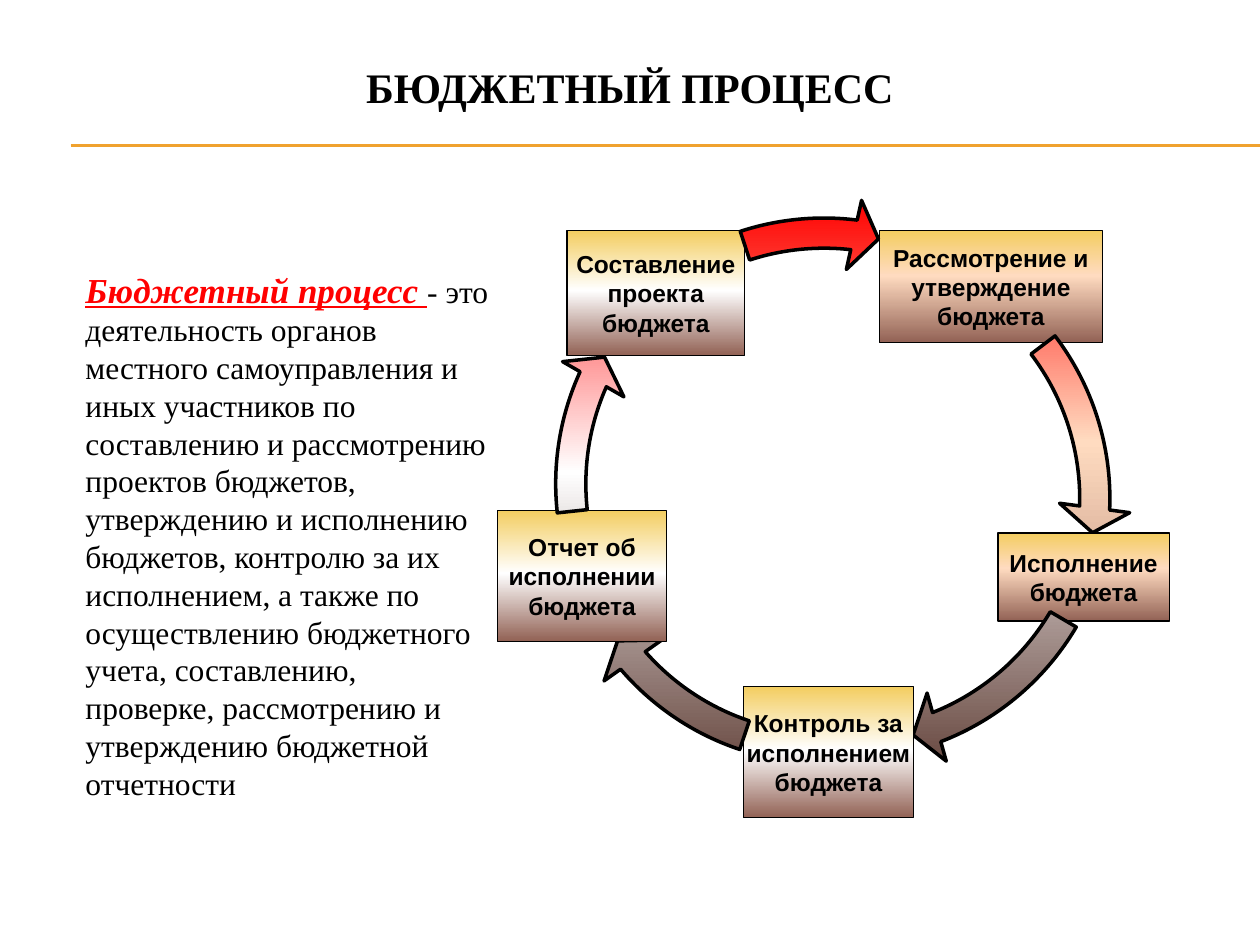
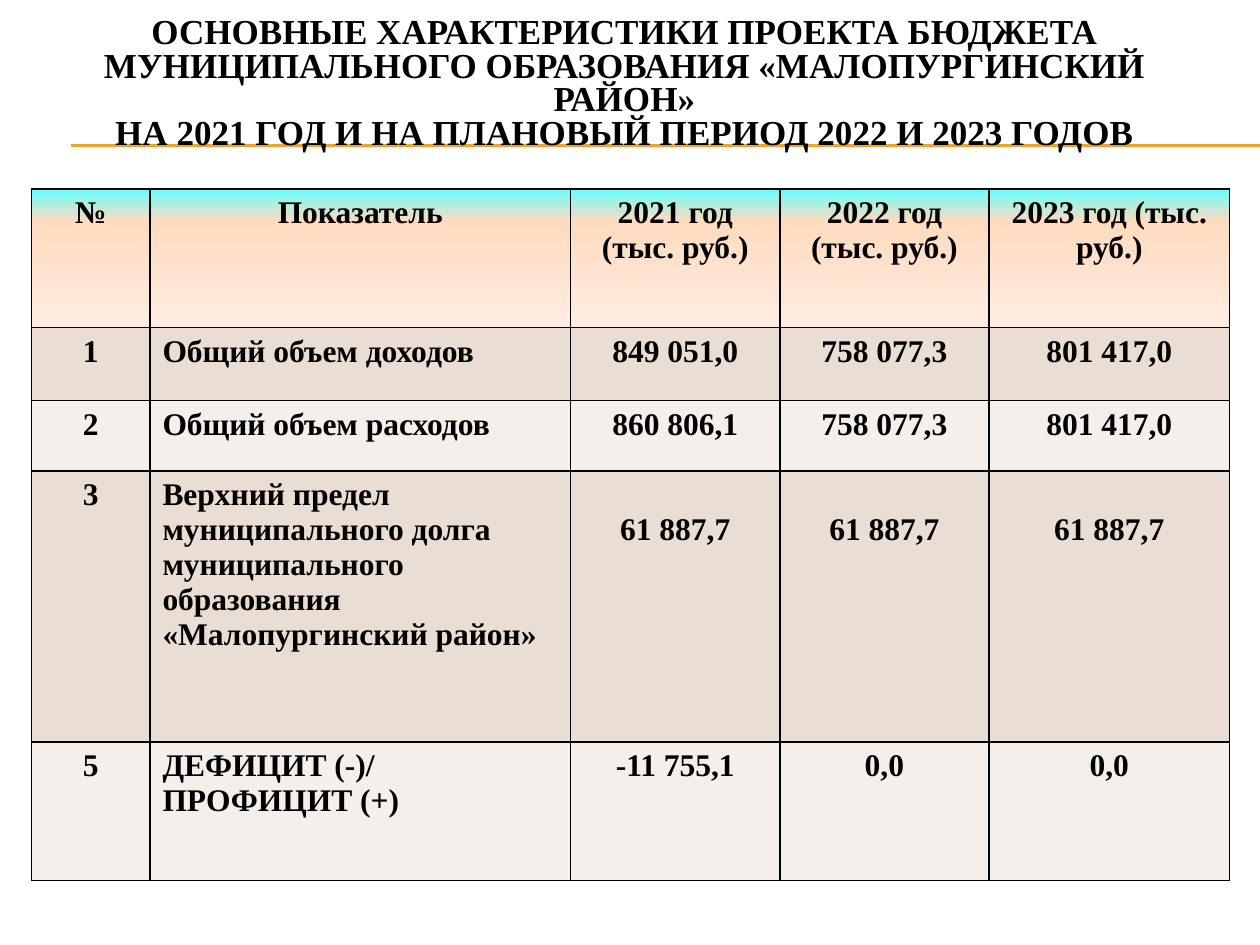
"""Build two slides on the municipal budget: the process cycle and the key figures."""
from lxml import etree
from pptx import Presentation
from pptx.dml.color import RGBColor
from pptx.enum.shapes import MSO_CONNECTOR, MSO_SHAPE
from pptx.enum.text import MSO_ANCHOR, MSO_AUTO_SIZE, PP_ALIGN
from pptx.oxml.ns import qn
from pptx.util import Inches, Pt

STRAIGHT = MSO_CONNECTOR.STRAIGHT
RECTANGLE = MSO_SHAPE.RECTANGLE
CIRCULAR_ARROW = MSO_SHAPE.CIRCULAR_ARROW
MIDDLE = MSO_ANCHOR.MIDDLE
NO_AUTOFIT = MSO_AUTO_SIZE.NONE
LEFT, CENTER = PP_ALIGN.LEFT, PP_ALIGN.CENTER
TITLE_ONLY = 5

SERIF, SANS = "Times New Roman", "Arial"
BLACK, RED, GOLD = "000000", "FF0000", "F0A22E"
PEACH_BOX = [(0, "F3CD60"), (40, "FFDBC0"), (100, "926255")]
WHITE_BOX = [(0, "F3CD60"), (48, "FFFFFF"), (100, "926255")]
PEACH_ARROW = [(0, RED), (40, "FFDBC0"), (100, "926255")]
WHITE_ARROW = [(0, RED), (40, "FFFFFF"), (100, "624139")]
LATE_WHITE_ARROW = [(0, RED), (48, "FFFFFF"), (100, "624139")]
CREAM_ARROW = [(0, RED), (49, "FBEEC9"), (100, "624139")]
HEADER_FILL = [(0, "66FFFF"), (23, "FFDBC0"), (100, "FFEDE0")]
ROW_FILLS = ["E9DDD4", "F5EFEB"]

RING_SIZE = 4.6
STAGES = [
    ("Рассмотрение и утверждение бюджета", (6.98, 1.83, 1.77, 0.89), PEACH_BOX,
     (4.37, 1.66), (322.79, 2.05), PEACH_ARROW),
    ("Исполнение бюджета", (7.92, 4.23, 1.36, 0.7), PEACH_BOX,
     (4.4, 1.59), (30.54, 68.67), WHITE_ARROW),
    ("Контроль за исполнением бюджета", (5.9, 5.45, 1.35, 1.04), WHITE_BOX,
     (4.25, 1.62), (108.5, 139.1), WHITE_ARROW),
    ("Отчет об исполнении бюджета", (3.95, 4.05, 1.34, 1.04), WHITE_BOX,
     (4.25, 1.54), (173.8, 204.26), LATE_WHITE_ARROW),
    ("Составление проекта бюджета", (4.5, 1.83, 1.41, 0.99), WHITE_BOX,
     (4.24, 1.57), (251.91, 276.77), CREAM_ARROW),
]
TERM = "Бюджетный процесс "
DEFINITION = (
    "- это деятельность органов местного самоуправления и иных участников "
    "по составлению и рассмотрению проектов бюджетов, утверждению и исполнению "
    "бюджетов, контролю за их исполнением, а также по осуществлению бюджетного "
    "учета, составлению, проверке, рассмотрению и утверждению бюджетной отчетности"
)
FIGURES_TITLE = (
    "ОСНОВНЫЕ ХАРАКТЕРИСТИКИ ПРОЕКТА БЮДЖЕТА МУНИЦИПАЛЬНОГО ОБРАЗОВАНИЯ "
    "«МАЛОПУРГИНСКИЙ РАЙОН»\n"
    "НА 2021 ГОД И НА ПЛАНОВЫЙ ПЕРИОД 2022 И 2023 ГОДОВ"
)
FIGURES = [
    ["№", "Показатель", "2021 год (тыс. руб.)", "2022 год (тыс. руб.)",
     "2023 год (тыс. руб.)"],
    ["1", "Общий объем доходов", "849 051,0", "758 077,3", "801 417,0"],
    ["2", "Общий объем расходов", "860 806,1", "758 077,3", "801 417,0"],
    ["3", "Верхний предел муниципального долга муниципального образования "
     "«Малопургинский район»", "61 887,7", "61 887,7", "61 887,7"],
    ["5", "ДЕФИЦИТ (-)/\nПРОФИЦИТ (+)", "-11 755,1", "0,0", "0,0"],
]
COLUMN_WIDTHS = [0.94, 3.34, 1.66, 1.66, 1.91]
ROW_HEIGHTS = [1.1, 0.58, 0.56, 2.15, 1.1]
INDICATOR_COLUMN, DEBT_ROW = 1, 3


def color(hex_string):
    """Turn a hex string into a colour."""
    return RGBColor.from_string(hex_string)


def add_text(paragraph, text, size=18, font=SERIF, ink=BLACK, bold=True,
             italic=False, underline=False):
    """Add text to a paragraph, with a line break at each newline."""
    for number, line in enumerate(text.split("\n")):
        if number:
            paragraph.add_line_break()
        run = paragraph.add_run()
        run.text = line
        run.font.size = Pt(size)
        run.font.name = font
        run.font.color.rgb = color(ink)
        run.font.bold = bold
        run.font.italic = italic
        run.font.underline = underline


def fill_gradient(fill, holder, stops):
    """Give a shape or cell a top-to-bottom gradient of any number of stops."""
    fill.background()
    gradient = etree.Element(qn("a:gradFill"), rotWithShape="1")
    stop_list = etree.SubElement(gradient, qn("a:gsLst"))
    for percent, shade in stops:
        stop = etree.SubElement(stop_list, qn("a:gs"), pos=str(percent * 1000))
        etree.SubElement(stop, qn("a:srgbClr"), val=shade)
    etree.SubElement(gradient, qn("a:lin"), ang="5400000", scaled="0")
    holder.replace(holder.find(qn("a:noFill")), gradient)


def add_borders(cell_properties, width=1):
    """Draw a black line on all four sides of a cell."""
    for position, side in enumerate(["lnL", "lnR", "lnT", "lnB"]):
        border = etree.Element(qn("a:" + side), w=str(Pt(width)))
        solid = etree.SubElement(border, qn("a:solidFill"))
        etree.SubElement(solid, qn("a:srgbClr"), val=BLACK)
        cell_properties.insert(position, border)


class Deck:
    """Hold the presentation, its style and the current slide."""

    def __init__(self):
        """Start an empty 10 by 7.5 inch presentation."""
        self.presentation = Presentation()
        self.presentation.slide_width = Inches(10)
        self.presentation.slide_height = Inches(7.5)
        self.slide = None

    def start_slide(self, title, box, size, spacing=1.0):
        """Add a slide with its title and the double gold rule behind it."""
        layout = self.presentation.slide_layouts[TITLE_ONLY]
        self.slide = self.presentation.slides.add_slide(layout)
        for height in (1.16, 1.15):
            self.rule(height)
        heading = self.slide.shapes.title
        heading.left, heading.top, heading.width, heading.height = map(Inches, box)
        frame = heading.text_frame
        frame.word_wrap = True
        frame.auto_size = NO_AUTOFIT
        frame.vertical_anchor = MIDDLE
        paragraph = frame.paragraphs[0]
        paragraph.alignment = CENTER
        paragraph.line_spacing = spacing
        add_text(paragraph, title, size=size)

    def rule(self, height):
        """Draw a gold rule to the right edge, behind everything else."""
        shapes = self.slide.shapes
        line = shapes.add_connector(STRAIGHT, Inches(0.56), Inches(height),
                                    Inches(10), Inches(height))
        line.line.color.rgb = color(GOLD)
        line.line.width = Pt(0.75)
        properties = line._element.spPr
        etree.SubElement(properties, qn("a:effectLst"))
        shapes._spTree.insert(2, line._element)

    def shape(self, kind, box, stops, line_width):
        """Add a preset shape with a gradient and a black outline."""
        shape = self.slide.shapes.add_shape(kind, *map(Inches, box))
        shape.shadow.inherit = False
        fill_gradient(shape.fill, shape._element.spPr, stops)
        shape.line.color.rgb = color(BLACK)
        shape.line.width = Pt(line_width)
        return shape

    def stage(self, name, box, stops):
        """Add a labelled box for one stage of the cycle."""
        frame = self.shape(RECTANGLE, box, stops, 0.75).text_frame
        frame.word_wrap = True
        frame.vertical_anchor = MIDDLE
        frame.margin_left = frame.margin_right = Inches(0.02)
        frame.margin_top = frame.margin_bottom = Inches(0.02)
        frame.paragraphs[0].alignment = CENTER
        add_text(frame.paragraphs[0], name, size=14, font=SANS)

    def ring_arrow(self, corner, angles, stops):
        """Add an arc arrow between two angles, in degrees, of a ring."""
        arrow = self.shape(CIRCULAR_ARROW, (*corner, RING_SIZE, RING_SIZE), stops, 2)
        start, end = angles
        settings = [5.2 / 100, 5.6 * 0.6, end * 0.6, start * 0.6, 6.1 / 100]
        for index, setting in enumerate(settings):
            arrow.adjustments[index] = setting

    def definition(self, term, meaning, box):
        """Add a text box with a highlighted term and its meaning."""
        frame = self.slide.shapes.add_textbox(*map(Inches, box)).text_frame
        frame.word_wrap = True
        paragraph = frame.paragraphs[0]
        add_text(paragraph, term, size=20, ink=RED, italic=True, underline=True)
        add_text(paragraph, meaning, bold=False)

    def figures(self, rows, corner):
        """Add the bordered table of budget figures."""
        table = self.slide.shapes.add_table(
            len(rows), len(COLUMN_WIDTHS), *map(Inches, corner),
            Inches(sum(COLUMN_WIDTHS)), Inches(sum(ROW_HEIGHTS))).table
        for column, width in zip(table.columns, COLUMN_WIDTHS):
            column.width = Inches(width)
        for row, height in zip(table.rows, ROW_HEIGHTS):
            row.height = Inches(height)
        for row_number, values in enumerate(rows):
            for column_number, value in enumerate(values):
                self.figure(table.cell(row_number, column_number), value,
                            row_number, column_number)

    def figure(self, cell, value, row_number, column_number):
        """Fill and format one cell of the table."""
        properties = cell._tc.get_or_add_tcPr()
        is_indicator = column_number == INDICATOR_COLUMN
        if row_number:
            cell.fill.solid()
            cell.fill.fore_color.rgb = color(ROW_FILLS[(row_number - 1) % 2])
        else:
            fill_gradient(cell.fill, properties, HEADER_FILL)
        add_borders(properties)
        if row_number == DEBT_ROW and column_number > INDICATOR_COLUMN:
            cell.margin_top = Inches(0.33)
        paragraph = cell.text_frame.paragraphs[0]
        paragraph.alignment = LEFT if row_number and is_indicator else CENTER
        add_text(paragraph, value)


def main():
    """Build both slides and save them."""
    deck = Deck()
    deck.start_slide("БЮДЖЕТНЫЙ ПРОЦЕСС", (0.5, 0.3, 9, 0.78), 24)
    for name, box, box_stops, corner, angles, arrow_stops in STAGES:
        deck.stage(name, box, box_stops)
        deck.ring_arrow(corner, angles, arrow_stops)
    deck.definition(TERM, DEFINITION, (0.58, 2.08, 3.42, 4.61))

    deck.start_slide(FIGURES_TITLE, (0.33, 0.09, 9.25, 1.17), 20, spacing=0.8)
    deck.figures(FIGURES, (0.25, 1.5))
    deck.presentation.save("out.pptx")


if __name__ == "__main__":
    main()
